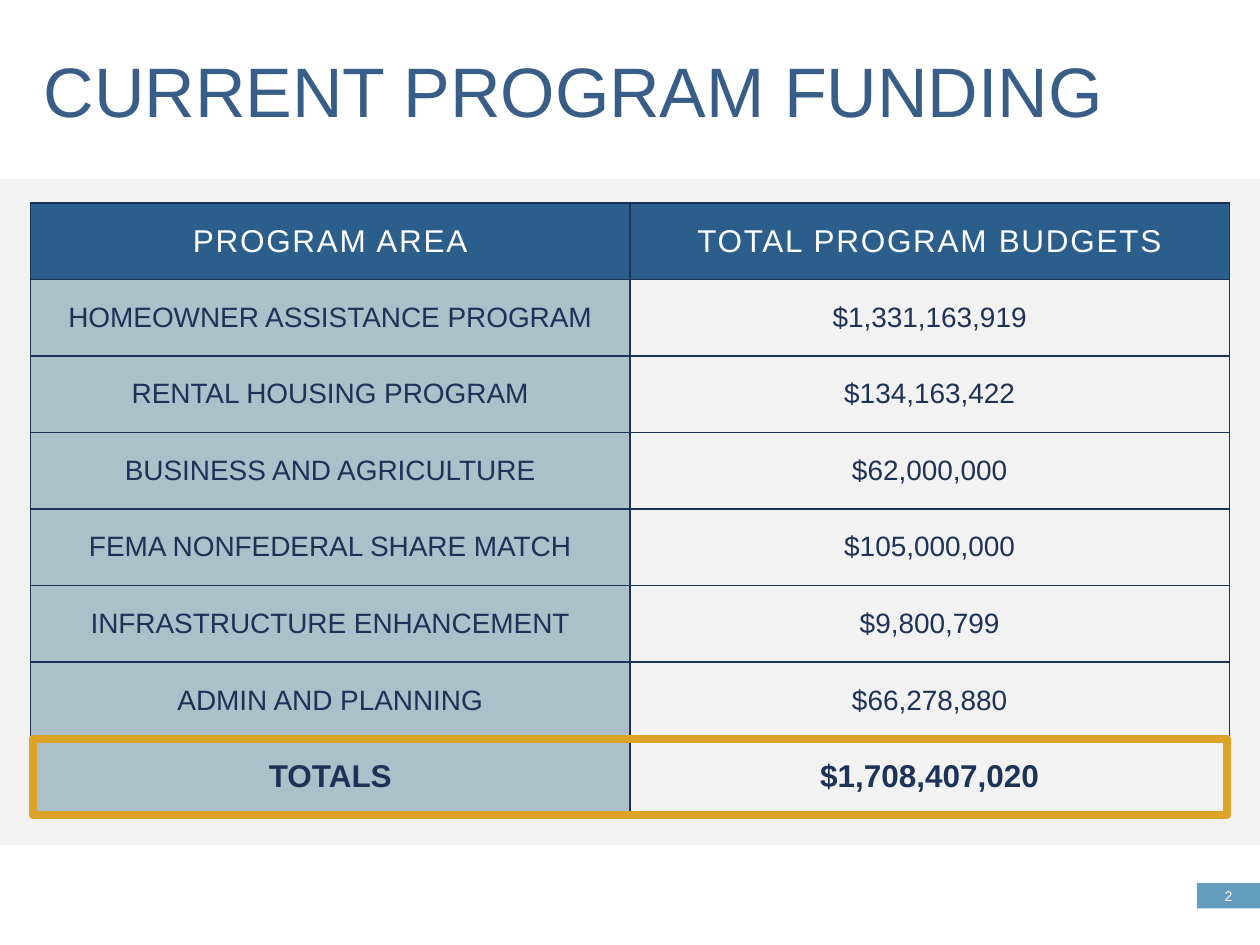
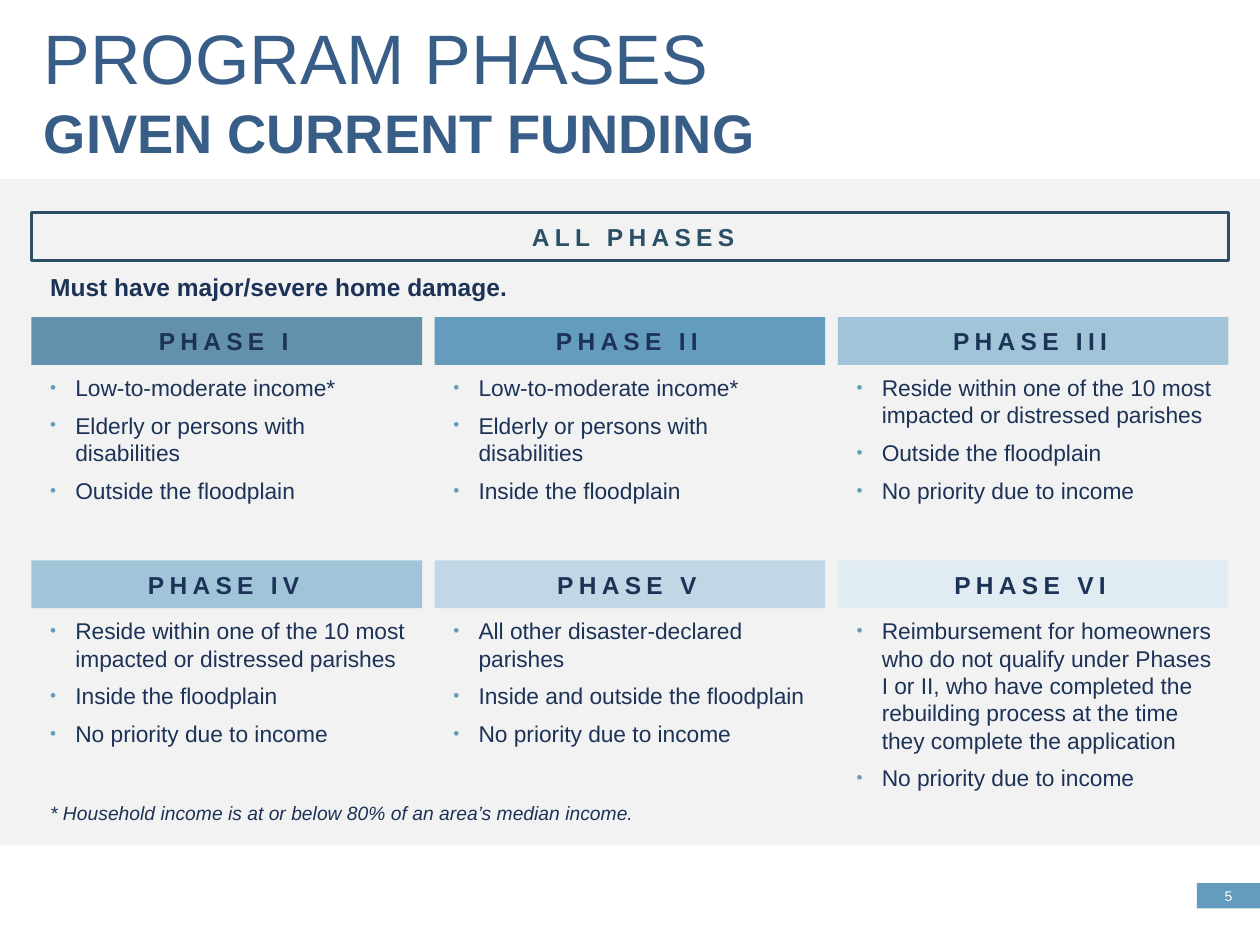
"""Builds two slides on housing recovery funding: the program budgets and the program phases."""
import pptx
import pptx.chart.data
import pptx.dml.color
import pptx.enum.shapes
import pptx.enum.text
import pptx.oxml
import pptx.oxml.ns
import pptx.util

Pt = pptx.util.Pt
Align = pptx.enum.text.PP_ALIGN
Anchor = pptx.enum.text.MSO_ANCHOR

COLORS = {
    "title": "385D87", "band": "F2F2F2", "accent": "649CBE", "white": "FFFFFF",
    "navy": "1C3257", "table_head": "2C5E8B", "area": "ABC1C9", "gold": "DDA228",
    "all_phases": "2B5066", "phase_1": "407899", "phase_3": "A2C4D8",
    "phase_5": "C1D7E5", "phase_6": "E0EBF2",
}
FONT = "Arial"
INSETS = (7.2, 3.6, 7.2, 3.6)
PAGE = (720, 540)
TITLE_BOX = (18, 0, 702, 102.24)
BAND_BOX = (0, 102.24, 720, 380.88)
NUMBER_BOX = (684, 504.72, 36, 14.4)

BUDGETS = [
    ("PROGRAM AREA", "TOTAL PROGRAM BUDGETS"),
    ("HOMEOWNER ASSISTANCE PROGRAM", "$1,331,163,919"),
    ("RENTAL HOUSING PROGRAM", "$134,163,422"),
    ("BUSINESS AND AGRICULTURE", "$62,000,000"),
    ("FEMA NONFEDERAL SHARE MATCH", "$105,000,000"),
    ("INFRASTRUCTURE ENHANCEMENT", "$9,800,799"),
    ("ADMIN AND PLANNING", "$66,278,880"),
    ("TOTALS", "$1,708,407,020"),
]

LOW_INCOME = "Low-to-moderate income*"
ELDERLY = "Elderly or persons with disabilities"
IMPACTED = "Reside within one of the 10 most impacted or distressed parishes"
INSIDE = "Inside the floodplain"
OUTSIDE = "Outside the floodplain"
NO_PRIORITY = "No priority due to income"
REIMBURSEMENT = ("Reimbursement for homeowners who do not qualify under Phases I or II, who have "
                 "completed the rebuilding process at the time they complete the application")
PHASES = [
    ("PHASE I", "phase_1", [LOW_INCOME, ELDERLY, OUTSIDE]),
    ("PHASE II", "accent", [LOW_INCOME, ELDERLY, INSIDE]),
    ("PHASE III", "phase_3", [IMPACTED, OUTSIDE, NO_PRIORITY]),
    ("PHASE IV", "phase_3", [IMPACTED, INSIDE, NO_PRIORITY]),
    ("PHASE V", "phase_5", ["All other disaster-declared parishes",
                            "Inside and outside the floodplain", NO_PRIORITY]),
    ("PHASE VI", "phase_6", [REIMBURSEMENT, NO_PRIORITY]),
]


def rgb(color):
    """Return the named colour."""
    return pptx.dml.color.RGBColor.from_string(COLORS[color])


def style(paragraph, size, color, bold=False, italic=False, spacing=0, align=Align.LEFT):
    """Format a paragraph and its runs."""
    paragraph.alignment = align
    for run in paragraph.runs:
        run.font.name, run.font.size = FONT, Pt(size)
        run.font.bold, run.font.italic = bold, italic
        run.font.color.rgb = rgb(color)
        if spacing:
            run.font._element.set("spc", str(spacing * 100))


def indent(paragraph, left, hanging=0):
    """Set the left margin and hanging indent of a paragraph."""
    properties = paragraph._p.get_or_add_pPr()
    properties.set("marL", str(int(Pt(left))))
    properties.set("indent", str(-int(Pt(hanging))))


def add_bullet(paragraph):
    """Give a paragraph a small accent bullet."""
    indent(paragraph, 18, 14.4)
    namespace = pptx.oxml.ns.nsdecls("a")
    for xml in (f'<a:buClr {namespace}><a:srgbClr val="{COLORS["accent"]}"/></a:buClr>',
                f'<a:buSzPct {namespace} val="75000"/>',
                f'<a:buFont {namespace} typeface="{FONT}"/>',
                f'<a:buChar {namespace} char="•"/>'):
        paragraph._p.get_or_add_pPr().append(pptx.oxml.parse_xml(xml))


def set_frame(frame, anchor, insets=INSETS):
    """Set wrapping, anchor and insets of a text frame."""
    frame.word_wrap = True
    frame.vertical_anchor = anchor
    frame.margin_left, frame.margin_top, frame.margin_right, frame.margin_bottom = map(Pt, insets)


def add_panel(slide, box, fill=None, line=None, weight=1):
    """Add a flat rectangle."""
    panel = slide.shapes.add_shape(pptx.enum.shapes.MSO_SHAPE.RECTANGLE, *map(Pt, box))
    panel.shadow.inherit = False
    if fill:
        panel.fill.solid()
        panel.fill.fore_color.rgb = rgb(fill)
    else:
        panel.fill.background()
    if line:
        panel.line.color.rgb = rgb(line)
        panel.line.width = Pt(weight)
    else:
        panel.line.fill.background()
    return panel


def add_label(panel, text, color, insets=INSETS):
    """Write a bold, spaced heading in a panel."""
    set_frame(panel.text_frame, Anchor.MIDDLE, insets)
    panel.text_frame.text = text
    heading = panel.text_frame.paragraphs[0]
    indent(heading, 3.6)
    style(heading, 14, color, bold=True, spacing=3, align=Align.CENTER)


def add_text(slide, box, lines, anchor=Anchor.TOP):
    """Add a text box with one paragraph per line and return its paragraphs."""
    frame = slide.shapes.add_textbox(*map(Pt, box)).text_frame
    set_frame(frame, anchor)
    frame.text = "\n".join(lines)
    return frame.paragraphs


def add_base(deck, number, title, subtitle=None):
    """Add a slide with the shared band, title and slide number."""
    slide = deck.slides.add_slide(deck.slide_layouts[6])
    corner = add_panel(slide, NUMBER_BOX, "accent")
    set_frame(corner.text_frame, Anchor.MIDDLE, (3.6,) * 4)
    corner.text_frame.text = str(number)
    style(corner.text_frame.paragraphs[0], 8, "white", align=Align.CENTER)
    add_panel(slide, BAND_BOX, "band")
    lines = [title, subtitle] if subtitle else [title]
    headings = add_text(slide, TITLE_BOX, lines, Anchor.MIDDLE)
    style(headings[0], 40, "title")
    if subtitle:
        style(headings[1], 31, "title", bold=True)
    return slide


def add_borders(cell):
    """Draw thin navy borders around a table cell."""
    properties = cell._tc.get_or_add_tcPr()
    for position, side in enumerate(("lnL", "lnR", "lnT", "lnB")):
        properties.insert(position, pptx.oxml.parse_xml(
            f'<a:{side} {pptx.oxml.ns.nsdecls("a")} w="{int(Pt(1))}"><a:solidFill>'
            f'<a:srgbClr val="{COLORS["navy"]}"/></a:solidFill></a:{side}>'))


def add_budget_table(slide, box):
    """Add the budget table with its totals row outlined."""
    left, top, width, height = box
    row_height = height / len(BUDGETS)
    budget = slide.shapes.add_table(len(BUDGETS), 2, *map(Pt, box)).table
    budget.first_row = budget.horz_banding = False
    for column in budget.columns:
        column.width = Pt(width / 2)
    for row, entries in enumerate(BUDGETS):
        budget.rows[row].height = Pt(row_height)
        is_head, is_total = row == 0, row == len(BUDGETS) - 1
        for column, entry in enumerate(entries):
            cell = budget.cell(row, column)
            cell.text = entry
            cell.vertical_anchor = Anchor.MIDDLE
            cell.fill.solid()
            cell.fill.fore_color.rgb = rgb("table_head" if is_head else ("area", "band")[column])
            add_borders(cell)
            style(cell.text_frame.paragraphs[0], 18 if is_head or is_total else 16,
                  "white" if is_head else "navy", bold=is_total,
                  spacing=1 if is_head else 0, align=Align.CENTER)
    add_panel(slide, (left + 1.2, top + height - row_height, width - 2.4, row_height),
              line="gold", weight=4.5)


def add_phase(slide, box, name, color, criteria):
    """Add a phase heading with its criteria below."""
    left, top, width, height = box
    heading = add_panel(slide, (left, top, width, 27.36), color)
    add_label(heading, name, "navy", (0, 3.6, 7.2, 3.6))
    if color == "phase_1":
        tint = heading.fill._xPr.find(".//" + pptx.oxml.ns.qn("a:srgbClr"))
        tint.append(pptx.oxml.parse_xml(f'<a:alpha {pptx.oxml.ns.nsdecls("a")} val="80000"/>'))
    criteria_box = (left, top + 28.8, width, height - 28.8)
    for position, criterion in enumerate(add_text(slide, criteria_box, criteria)):
        add_bullet(criterion)
        if position:
            criterion.space_before = Pt(6)
        style(criterion, 13, "navy")


def add_phase_grid(slide, box, columns=3, column_gap=7.2, row_pitch=138.96):
    """Lay the phases out in rows of equal columns."""
    left, top, width, height = box
    phase_width = (width - (columns - 1) * column_gap) / columns
    for position, phase in enumerate(PHASES):
        row, column = divmod(position, columns)
        phase_box = (left + column * (phase_width + column_gap), top + row * row_pitch,
                     phase_width, height - row_pitch)
        add_phase(slide, phase_box, *phase)


def add_phase_overview(slide, box):
    """Add the rule for all phases, the phase grid and the footnote."""
    left, top, width, height = box
    add_label(add_panel(slide, (left, top, width, 27.36), line="all_phases", weight=1.5),
              "ALL PHASES", "all_phases")
    rule = add_text(slide, (left, top + 30.24, width, 31.68),
                    ["Must have major/severe home damage."])[0]
    indent(rule, 3.6)
    style(rule, 14, "navy", bold=True)
    add_phase_grid(slide, (left, top + 59.76, width, height - 59.76))
    footnote = add_text(slide, (left, top + 332.64, 460.8, 21.6),
                        ["* Household income is at or below 80% of an area’s median income."])[0]
    indent(footnote, 3.6)
    style(footnote, 11, "navy", italic=True)


def main():
    """Build and save both slides."""
    deck = pptx.Presentation()
    deck.slide_width, deck.slide_height = map(Pt, PAGE)
    funding = add_base(deck, 2, "CURRENT PROGRAM FUNDING")
    add_budget_table(funding, (17.5, 115.92, 685, 350))
    phases = add_base(deck, 5, "PROGRAM PHASES", "GIVEN CURRENT FUNDING")
    add_phase_overview(phases, (18, 121.44, 684, 353.52))
    deck.save("out.pptx")


if __name__ == "__main__":
    main()
